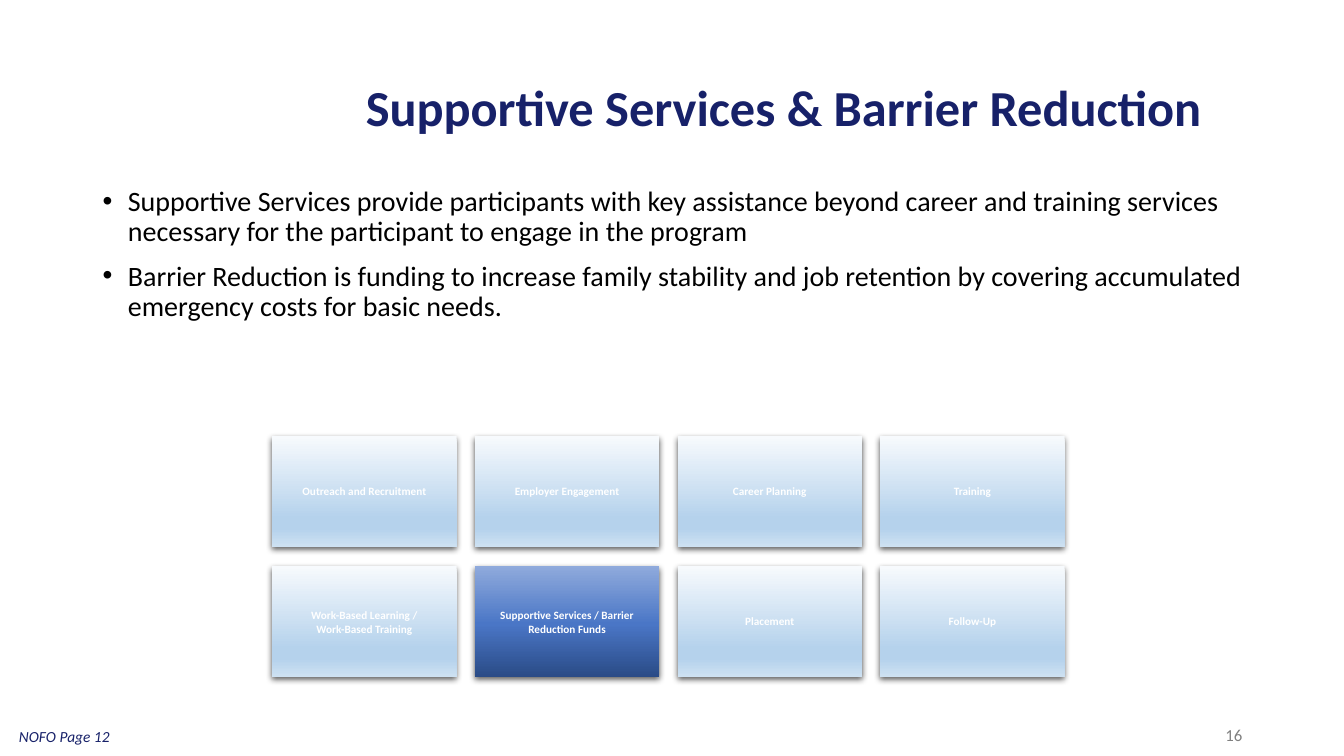
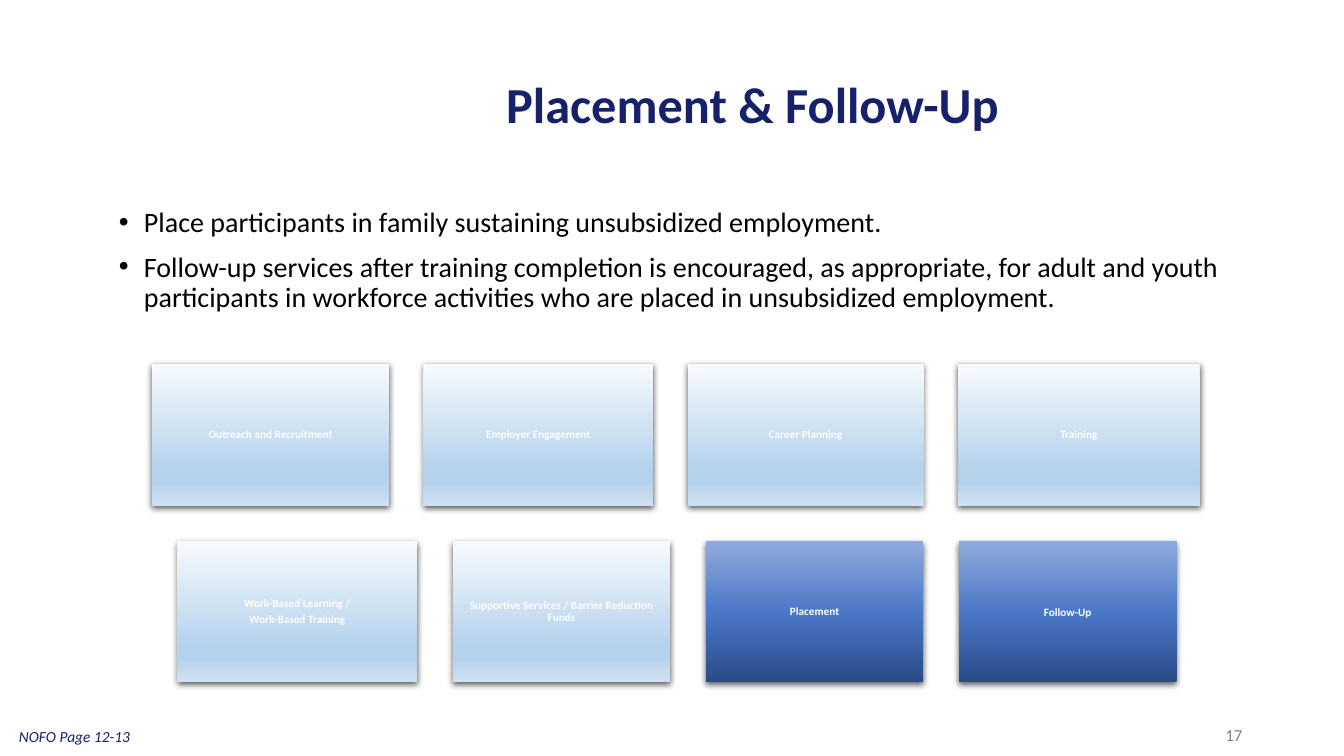
from lxml import etree
from pptx import Presentation, util as u
from pptx.dml.color import RGBColor
from pptx.enum import shapes, text
from pptx.oxml.ns import qn

# Shared look
COLORS = {"navy": "172169", "black": "000000", "grey": "808080", "white": "FFFFFF"}
GRADIENTS = {  # angle (counter-clockwise), then stops in percent
    "pale": (270, [(0, "F7FAFD"), (74, "B5D2EC"), (83, "B5D2EC"), (100, "CEE1F2")]),
    "active": (90, [(0, "2A4B86"), (48, "4A76C6"), (100, "8FAADC")]),
}
LEFT, CENTER, RIGHT = text.PP_ALIGN.LEFT, text.PP_ALIGN.CENTER, text.PP_ALIGN.RIGHT
TOP, MIDDLE = text.MSO_ANCHOR.TOP, text.MSO_ANCHOR.MIDDLE
STYLES = {
    "title": {"color": "navy", "anchor": MIDDLE, "font": {"size": u.Pt(36), "bold": True},
              "para": {"alignment": CENTER, "line_spacing": 0.9}},
    "body": {"color": "black", "anchor": TOP, "font": {"size": u.Pt(20)},
             "para": {"alignment": LEFT, "line_spacing": 0.9}, "bullet": True, "before": 10},
    "number": {"color": "grey", "anchor": MIDDLE, "font": {"size": u.Pt(12)},
               "para": {"alignment": RIGHT}},
    "source": {"color": "navy", "anchor": TOP, "font": {"size": u.Pt(11), "italic": True},
               "para": {"alignment": LEFT}},
    "tile": {"color": "white", "anchor": MIDDLE, "font": {"size": u.Pt(8), "bold": True},
             "para": {"alignment": CENTER, "line_spacing": 0.9, "space_after": u.Pt(2.8)}},
    "plain tile": {"color": "white", "anchor": MIDDLE, "font": {"size": u.Pt(8), "bold": True},
                   "para": {"alignment": CENTER}},
}
TILES = [
    ["Outreach and Recruitment"], ["Employer Engagement"], ["Career Planning"], ["Training"],
    ["Work-Based Learning /", "Work-Based Training"],
    ["Supportive Services / Barrier Reduction Funds"], ["Placement"], ["Follow-Up"],
]

# Content: each tile row is left, top, height, gap, widths
SLIDES = [
    {"title": "Supportive Services & Barrier Reduction", "title_at": (2.52, 0.79),
     "body": ["Supportive Services provide participants with key assistance beyond career and "
              "training services necessary for the participant to engage in the program",
              "Barrier Reduction is funding to increase family stability and job retention by "
              "covering accumulated emergency costs for basic needs."],
     "body_at": (0.92, 1.81), "number": "16", "source": "NOFO Page 12",
     "rows": [(2.7, 4.33, 1.1, 0.18, [1.83] * 4), (2.7, 5.62, 1.1, 0.18, [1.83] * 4)],
     "active": {5}, "plain": {4, 5}},
    {"title": "Placement & Follow-Up", "title_at": (2.21, 0.76),
     "body": ["Place participants in family sustaining unsubsidized employment.",
              "Follow-up services after training completion is encouraged, as appropriate, for "
              "adult and youth participants in workforce activities who are placed in "
              "unsubsidized employment."],
     "body_at": (1.08, 2.02), "number": "17", "source": "NOFO Page 12-13",
     "rows": [(1.51, 3.61, 1.41, 0.34, [2.35, 2.28, 2.34, 2.4]),
              (1.76, 5.37, 1.4, 0.35, [2.38, 2.16, 2.16, 2.16])],
     "active": {6, 7}, "plain": {7}},
]


def write(sp, lines, style):
    fmt = STYLES[style]
    tf = sp.text_frame
    tf.word_wrap = True
    tf.vertical_anchor = fmt["anchor"]
    for i, line in enumerate(lines):
        p = tf.paragraphs[0] if i == 0 else tf.add_paragraph()
        for name, value in fmt["para"].items():
            setattr(p, name, value)
        if i and "before" in fmt:
            p.space_before = u.Pt(fmt["before"])
        if fmt.get("bullet"):
            pPr = p._p.get_or_add_pPr()
            pPr.set("marL", str(u.Inches(0.25)))
            pPr.set("indent", str(u.Inches(-0.25)))
            etree.SubElement(pPr, qn("a:buFont"), typeface="Arial")
            etree.SubElement(pPr, qn("a:buChar"), char="•")
        r = p.add_run()
        r.text = line
        r.font.name = "Calibri"
        r.font.color.rgb = RGBColor.from_string(COLORS[fmt["color"]])
        for name, value in fmt["font"].items():
            setattr(r.font, name, value)


def paint_tile(sp, look):
    # Gradient with any number of stops
    angle, stops = GRADIENTS[look]
    sp.fill.gradient()
    sp.fill.gradient_angle = angle
    gs_list = sp._element.spPr.find(".//" + qn("a:gsLst"))
    for gs in list(gs_list):
        gs_list.remove(gs)
    for pos, color in stops:
        gs = etree.SubElement(gs_list, qn("a:gs"), pos=str(pos * 1000))
        etree.SubElement(gs, qn("a:srgbClr"), val=color)
    sp.line.fill.background()
    # Soft shadow below
    sp.shadow.inherit = False
    effects = sp._element.spPr.find(qn("a:effectLst"))
    shadow = etree.SubElement(effects, qn("a:outerShdw"), blurRad=str(u.Pt(4.5)),
                              dist=str(u.Pt(1.5)), dir="5400000", algn="ctr", rotWithShape="0")
    black = etree.SubElement(shadow, qn("a:srgbClr"), val=COLORS["black"])
    etree.SubElement(black, qn("a:alpha"), val="63000")


prs = Presentation()
prs.slide_width, prs.slide_height = u.Inches(13.33), u.Inches(7.5)

for content in SLIDES:
    s = prs.slides.add_slide(prs.slide_layouts[6])

    # Title, bullets, page number and source note
    for style, lines, box in [
        ("title", [content["title"]], (*content["title_at"], 10.51, 0.61)),
        ("body", content["body"], (*content["body_at"], 11.5, 1.4)),
        ("number", [content["number"]], (9.42, 7.09, 3, 0.4)),
        ("source", [content["source"]], (0.09, 7.16, 2.33, 0.29)),
    ]:
        write(s.shapes.add_textbox(*map(u.Inches, box)), lines, style)

    # Two rows of service tiles
    index = 0
    for left, top, height, gap, widths in content["rows"]:
        for width in widths:
            sp = s.shapes.add_shape(shapes.MSO_SHAPE.RECTANGLE,
                                    *map(u.Inches, (left, top, width, height)))
            paint_tile(sp, "active" if index in content["active"] else "pale")
            for side in ("left", "top", "right", "bottom"):
                setattr(sp.text_frame, "margin_" + side, u.Inches(0.03))
            write(sp, TILES[index], "plain tile" if index in content["plain"] else "tile")
            left += width + gap
            index += 1

prs.save("out.pptx")
